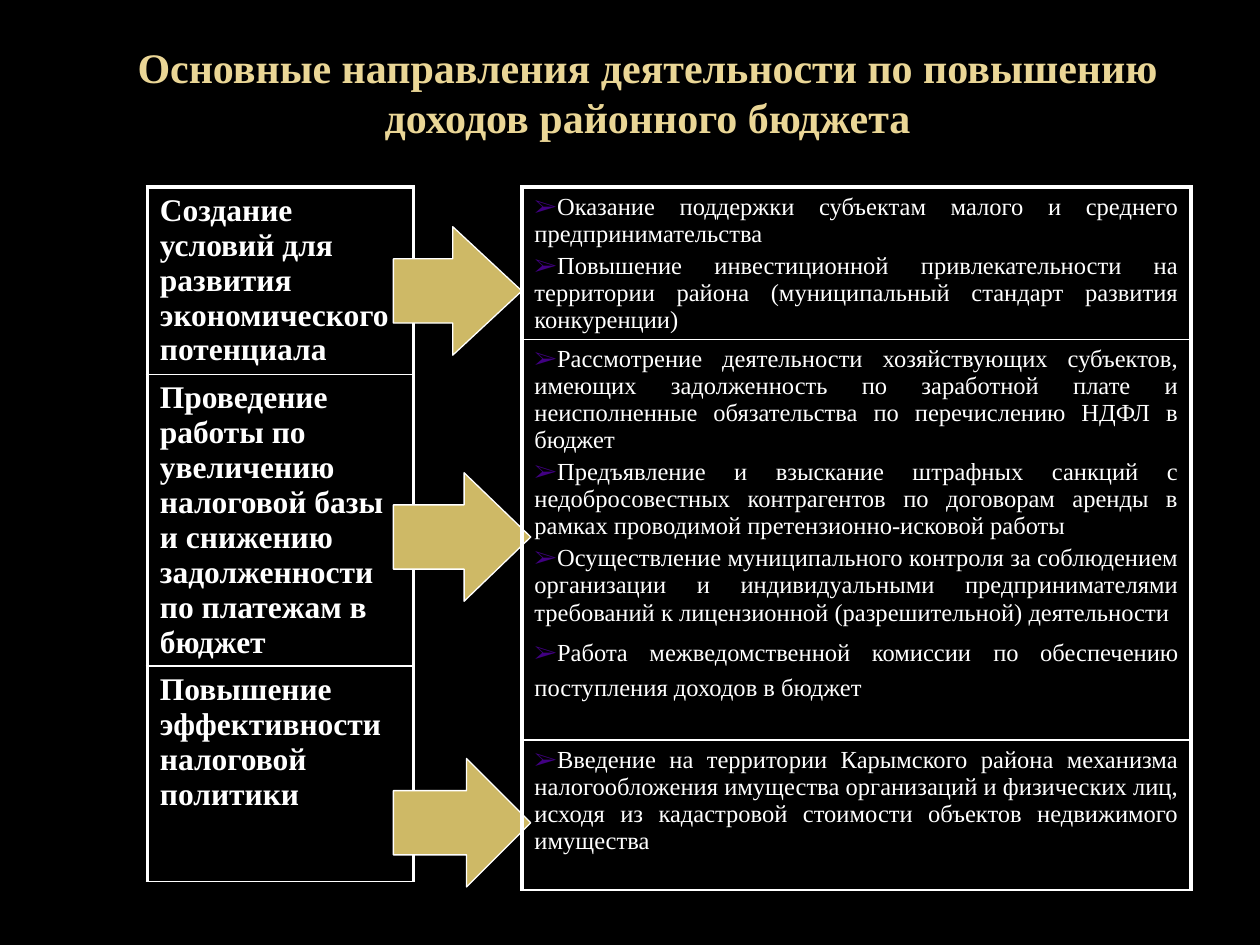
"""Build the slide on measures that raise district budget revenue."""
from lxml.etree import SubElement
from pptx import Presentation
from pptx.dml.color import RGBColor
from pptx.enum.shapes import MSO_SHAPE
from pptx.enum.text import MSO_ANCHOR, PP_ALIGN
from pptx.oxml import parse_xml
from pptx.oxml.ns import nsdecls, qn
from pptx.util import Cm, Pt

BLACK = RGBColor(0x00, 0x00, 0x00)
WHITE = RGBColor(0xFF, 0xFF, 0xFF)
GOLD = RGBColor(0xCE, 0xB9, 0x66)
TITLE_GOLD = RGBColor(0xEA, 0xD6, 0x96)
BULLET = RGBColor(0x41, 0x00, 0x82)
FONT = "Times New Roman"
LINE_RATIO = 1.107

TITLE = "Основные направления деятельности по повышению доходов районного бюджета"
DIRECTIONS = [
    ["Создание условий для развития экономического потенциала"],
    ["Проведение работы по увеличению налоговой базы и снижению "
     "задолженности по платежам в бюджет"],
    ["Повышение эффективности налоговой политики"],
]
MEASURES = [
    ["Оказание поддержки субъектам малого и среднего предпринимательства",
     "Повышение инвестиционной привлекательности на территории района "
     "(муниципальный стандарт развития конкуренции)"],
    ["Рассмотрение деятельности хозяйствующих субъектов, имеющих задолженность "
     "по заработной плате и неисполненные обязательства по перечислению НДФЛ в бюджет",
     "Предъявление и взыскание штрафных санкций с недобросовестных контрагентов "
     "по договорам аренды в рамках проводимой претензионно-исковой работы",
     "Осуществление муниципального контроля за соблюдением организации и "
     "индивидуальными предпринимателями требований к лицензионной "
     "(разрешительной) деятельности",
     [("Работа межведомственной комиссии", FONT, 14),
      (" ", "Vollkorn", 18),
      ("по обеспечению поступления доходов в бюджет", FONT, 14)]],
    ["Введение на территории Карымского района механизма налогообложения "
     "имущества организаций и физических лиц, исходя из кадастровой стоимости "
     "объектов недвижимого имущества"],
]
TABLE_TOP = 3.77
LEFT_TABLE = dict(left=2.97, width=5.36, heights=[3.78, 5.88, 4.34])
RIGHT_TABLE = dict(left=10.52, width=13.49, heights=[3.07, 8.08, 3.02])
ARROW_LEFT, ARROW_HEIGHT = 7.93, 2.59
ARROWS = [(4.57, 2.59, 0.538), (9.53, 2.77, 0.519), (15.29, 2.77, 0.5)]


def add_run(p, text, font, size, color, bold):
    r = p.add_run()
    r.text = text
    r.font.name = font
    r.font.size = Pt(size)
    r.font.bold = bold
    r.font.color.rgb = color


def add_bullet(p):
    pPr = p._p.get_or_add_pPr()
    color = SubElement(pPr, qn("a:buClr"))
    SubElement(color, qn("a:srgbClr"), val=str(BULLET))
    SubElement(pPr, qn("a:buFont"), typeface=FONT)
    SubElement(pPr, qn("a:buChar"), char="➢")


def set_borders(cell, widths):
    tcPr = cell._tc.get_or_add_tcPr()
    for i, (side, width) in enumerate(widths.items()):
        tcPr.insert(i, parse_xml(
            f'<a:ln{side} {nsdecls("a")} w="{Pt(width)}"><a:solidFill>'
            f'<a:srgbClr val="{WHITE}"/></a:solidFill></a:ln{side}>'))


def add_column(s, rows, left, width, heights, size, bold=False, bulleted=False):
    frame = s.shapes.add_table(len(rows), 1, Cm(left), Cm(TABLE_TOP),
                               Cm(width), Cm(sum(heights)))
    table = frame.table
    table.first_row = table.horz_banding = False
    for i, (paragraphs, height) in enumerate(zip(rows, heights)):
        table.rows[i].height = Cm(height)
        cell = table.cell(i, 0)
        cell.margin_bottom = Cm(0)
        cell.fill.background()
        set_borders(cell, {"L": 2.25, "R": 2.25, "T": 1 if i else 2.25, "B": 1})
        tf = cell.text_frame
        for j, content in enumerate(paragraphs):
            p = tf.add_paragraph() if j else tf.paragraphs[0]
            p.space_before = Pt(size * 0.2)
            if isinstance(content, str):
                p.line_spacing = Pt(size * LINE_RATIO)
                content = [(content, FONT, size)]
            if bulleted:
                p.alignment = PP_ALIGN.JUSTIFY
                add_bullet(p)
            for text, font, points in content:
                add_run(p, text, font, points, WHITE, bold)


def add_arrow(s, top, width, head):
    sp = s.shapes.add_shape(MSO_SHAPE.LEFT_ARROW, Cm(ARROW_LEFT), Cm(top),
                            Cm(width), Cm(ARROW_HEIGHT))
    sp.rotation = 180
    sp.adjustments[0] = 0.5
    sp.adjustments[1] = head
    sp.shadow.inherit = False
    sp.fill.solid()
    sp.fill.fore_color.rgb = GOLD
    sp.line.color.rgb = WHITE
    sp.line.width = Pt(0.75)


def add_title(s):
    tf = s.shapes.add_textbox(Cm(1.5), Cm(0.72), Cm(23.11), Cm(2.26)).text_frame
    tf.word_wrap = True
    tf.vertical_anchor = MSO_ANCHOR.MIDDLE
    p = tf.paragraphs[0]
    p.alignment = PP_ALIGN.CENTER
    add_run(p, TITLE, FONT, 24, TITLE_GOLD, True)


def main():
    prs = Presentation()
    prs.slide_width, prs.slide_height = Cm(25.4), Cm(19.05)
    s = prs.slides.add_slide(prs.slide_layouts[6])
    s.background.fill.solid()
    s.background.fill.fore_color.rgb = BLACK
    add_title(s)
    add_column(s, DIRECTIONS, **LEFT_TABLE, size=18, bold=True)
    for arrow in ARROWS:
        add_arrow(s, *arrow)
    add_column(s, MEASURES, **RIGHT_TABLE, size=14, bulleted=True)
    prs.save("out.pptx")


if __name__ == "__main__":
    main()
